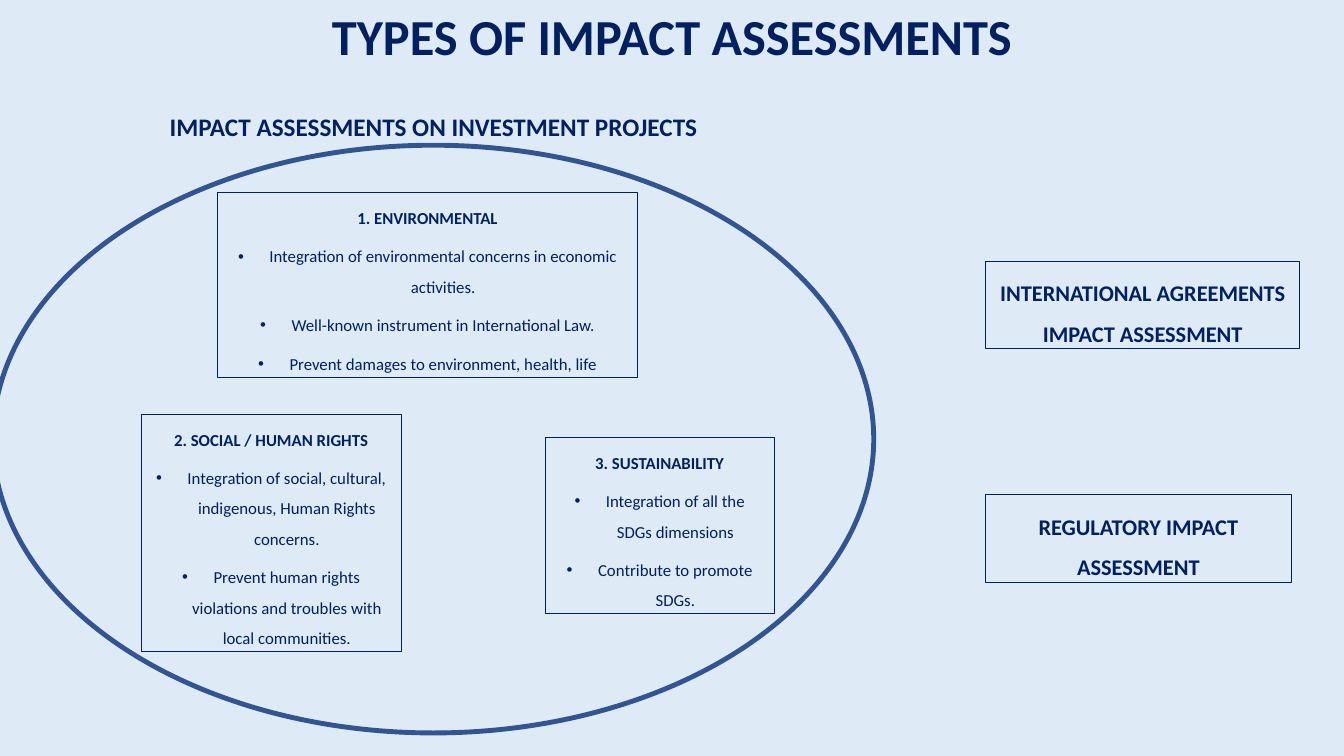
from pptx import Presentation
from pptx.dml.color import RGBColor
from pptx.enum.shapes import MSO_SHAPE
from pptx.enum.text import MSO_ANCHOR, MSO_AUTO_SIZE, PP_ALIGN
from pptx.util import Cm, Pt
from lxml.etree import SubElement
from pptx.oxml.ns import qn

NAVY = RGBColor(0x00, 0x20, 0x60)
BLUE = RGBColor(0x32, 0x54, 0x91)
PALE = RGBColor(0xDE, 0xEB, 0xF7)


class Deck:
    font = "Calibri"
    ink = NAVY
    paper = PALE

    def __init__(self, wide, high):
        self.prs = Presentation()
        self.prs.slide_width = Cm(wide)
        self.prs.slide_height = Cm(high)
        self.slide = self.prs.slides.add_slide(self.prs.slide_layouts[5])
        back = self.slide.background.fill
        back.solid()
        back.fore_color.rgb = self.paper

    def add_text(self, para, text, size, bold):
        para.alignment = PP_ALIGN.CENTER
        run = para.add_run()
        run.text = text
        run.font.name = self.font
        run.font.size = Pt(size)
        run.font.bold = bold
        run.font.color.rgb = self.ink

    def bullet(self, para):
        props = para._p.get_or_add_pPr()
        props.set("marL", str(Cm(0.79)))
        props.set("indent", str(Cm(-0.79)))
        SubElement(props, qn("a:buFont"), typeface="Arial")
        SubElement(props, qn("a:buChar"), char="•")

    def title(self, text, left, top, wide, high):
        head = self.slide.shapes.title
        head.left, head.top = Cm(left), Cm(top)
        head.width, head.height = Cm(wide), Cm(high)
        frame = head.text_frame
        frame.word_wrap = True
        frame.auto_size = MSO_AUTO_SIZE.SHAPE_TO_FIT_TEXT
        frame.vertical_anchor = MSO_ANCHOR.TOP
        self.add_text(frame.paragraphs[0], text, 36, True)

    def shape(self, kind, area, color=None, weight=0):
        item = self.slide.shapes.add_shape(kind, *map(Cm, area))
        item.shadow.inherit = False
        if color is None:
            item.line.fill.background()
        else:
            item.line.color.rgb = color
            item.line.width = Pt(weight)
        return item

    def ring(self, area):
        item = self.shape(MSO_SHAPE.OVAL, area, BLUE, 3.5)
        item.fill.background()

    def box(self, area, head, size, points=(), edge=NAVY):
        item = self.shape(MSO_SHAPE.RECTANGLE, area, edge, 0.75)
        item.fill.solid()
        item.fill.fore_color.rgb = self.paper
        frame = item.text_frame
        frame.word_wrap = True
        frame.auto_size = MSO_AUTO_SIZE.SHAPE_TO_FIT_TEXT
        frame.vertical_anchor = MSO_ANCHOR.TOP
        for rank, text in enumerate([head, *points]):
            para = frame.add_paragraph() if rank else frame.paragraphs[0]
            para.line_spacing = 1.5
            para.space_before = Pt(6)
            self.add_text(para, text, size, rank == 0)
            if rank:
                self.bullet(para)

    def save(self):
        self.prs.save("out.pptx")


def main():
    deck = Deck(33.87, 19.05)
    deck.title("TYPES OF IMPACT ASSESSMENTS", 0, 0, 33.87, 1.8)
    deck.ring((-0.18, 3.66, 22.2, 14.81))
    deck.box((5.49, 4.85, 10.57, 4.67), "1. ENVIRONMENTAL", 12, [
        "Integration of environmental concerns in economic activities.",
        "Well-known instrument in International Law.",
        "Prevent damages to environment, health, life",
    ])
    deck.box((13.74, 11.02, 5.77, 4.45), "3. SUSTAINABILITY", 12, [
        "Integration of all the SDGs dimensions",
        "Contribute to promote SDGs.",
    ])
    deck.box((3.56, 10.44, 6.55, 5.99), "2. SOCIAL / HUMAN RIGHTS", 12, [
        "Integration of social, cultural, indigenous, Human Rights concerns.",
        "Prevent human rights violations and troubles with local communities.",
    ])
    deck.box((24.84, 12.47, 7.7, 2.21), "REGULATORY IMPACT ASSESSMENT", 16)
    deck.box((24.84, 6.58, 7.92, 2.21),
             "INTERNATIONAL AGREEMENTS IMPACT ASSESSMENT", 16)
    deck.box((2.44, 2.29, 16.97, 1.3),
             "IMPACT ASSESSMENTS ON INVESTMENT PROJECTS", 18, edge=None)
    deck.save()


if __name__ == "__main__":
    main()
